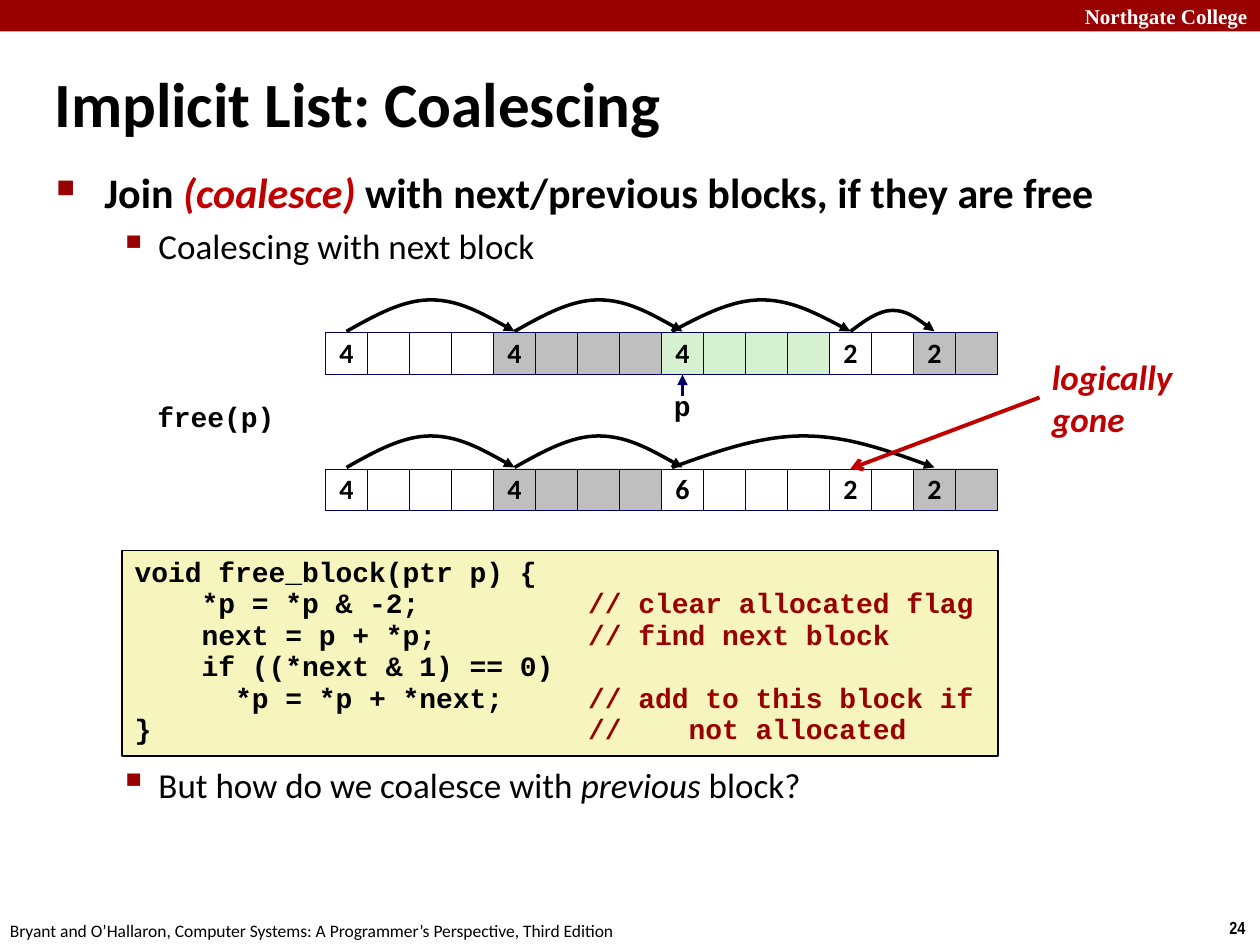
from dataclasses import dataclass

from lxml import etree
from pptx import Presentation
from pptx.dml.color import RGBColor
from pptx.enum.shapes import MSO_CONNECTOR, MSO_SHAPE
from pptx.enum.text import MSO_ANCHOR, PP_ALIGN
from pptx.oxml.ns import qn
from pptx.util import Inches, Pt

RECT, STRAIGHT = MSO_SHAPE.RECTANGLE, MSO_CONNECTOR.STRAIGHT
LEFT, CENTER, RIGHT = PP_ALIGN.LEFT, PP_ALIGN.CENTER, PP_ALIGN.RIGHT
TOP, MIDDLE = MSO_ANCHOR.TOP, MSO_ANCHOR.MIDDLE
SIDE_LEFT, SIDE_TOP, SIDE_BOTTOM = 1, 0, 2


@dataclass(frozen=True)
class Theme:
    black: str = "000000"
    white: str = "FFFFFF"
    crimson: str = "990000"
    red: str = "C00000"
    navy: str = "000066"
    gray: str = "BFBFBF"
    green: str = "D5F1CF"
    cream: str = "F6F5BD"
    sans: str = "Calibri"
    mono: str = "Courier New"
    serif: str = "Times New Roman"
    narrow: str = "Arial Narrow"
    title: int = 36
    heading: int = 24
    body: int = 20
    code: int = 16
    header: int = 12
    footer: int = 10


class SlideBuilder:
    """Draws on one slide; lengths are units of a 120 by 90 grid."""

    def __init__(self, slide, theme):
        self.shapes = slide.shapes
        self.theme = theme

    def grid(self, *units):
        return [Inches(unit / 12) for unit in units]

    def paragraph(self, frame, runs, size, font=None, bold=False, italic=False,
                  color=None, align=LEFT, spacing=1.0, first=False):
        """Add a paragraph; each run is its text and a dict of what differs."""
        para = frame.paragraphs[0] if first else frame.add_paragraph()
        para.alignment, para.line_spacing = align, spacing
        for words, changes in runs:
            run = para.add_run()
            run.text = words
            run.font.size = Pt(size)
            run.font.name = font or self.theme.sans
            run.font.bold = bold
            run.font.italic = changes.get("italic", italic)
            run.font.color.rgb = RGBColor.from_string(
                changes.get("color", color or self.theme.black))
        return para

    def text(self, box, lines, size, anchor=TOP, wrap=True, **style):
        label = self.shapes.add_textbox(*self.grid(*box))
        label.text_frame.word_wrap = wrap
        label.text_frame.vertical_anchor = anchor
        for number, line in enumerate(lines):
            self.paragraph(label.text_frame, [(line, {})], size,
                           first=number == 0, **style)
        return label

    def bullets(self, box, items):
        """Write bulleted items given as (level, runs)."""
        frame = self.shapes.add_textbox(*self.grid(*box)).text_frame
        frame.word_wrap = True
        levels = [(self.theme.heading, True, 0.83, 17.5, 0.38, 0.38, "■", 60),
                  (self.theme.body, False, 0.88, 7.5, 0.81, 0.31, "▪", 110)]
        for number, (level, runs) in enumerate(items):
            size, bold, spacing, before, margin, hang, mark, percent = levels[level]
            para = self.paragraph(frame, runs, size, bold=bold, spacing=spacing,
                                  first=number == 0)
            para.space_before = Pt(before)
            props = para._p.get_or_add_pPr()
            props.set("marL", str(Inches(margin)))
            props.set("indent", str(-Inches(hang)))
            tint = etree.SubElement(props, qn("a:buClr"))
            etree.SubElement(tint, qn("a:srgbClr"), val=self.theme.crimson)
            etree.SubElement(props, qn("a:buSzPct"), val=str(percent * 1000))
            etree.SubElement(props, qn("a:buChar"), char=mark)

    def rect(self, box, fill, line=None, width=1.0):
        shape = self.shapes.add_shape(RECT, *self.grid(*box))
        shape.shadow.inherit = False
        shape.fill.solid()
        shape.fill.fore_color.rgb = RGBColor.from_string(fill)
        if line:
            self.stroke(shape, line, width)
        else:
            shape.line.fill.background()
        return shape

    def stroke(self, shape, color, width, head=None):
        shape.line.color.rgb = RGBColor.from_string(color)
        shape.line.width = Pt(width)
        if head:
            outline = shape._element.spPr.find(qn("a:ln"))
            etree.SubElement(outline, qn("a:tailEnd"), type=head)

    def blocks(self, left, top, blocks):
        """Draw a row of blocks given as (header, words, fill); return its cells."""
        cells = []
        for header, words, fill in blocks:
            for word in range(words):
                cell = self.rect((left + 4 * len(cells), top, 4, 4), fill,
                                 self.theme.navy, 0.25)
                if word == 0:
                    cell.text_frame.word_wrap = False
                    cell.text_frame.vertical_anchor = MIDDLE
                    self.paragraph(cell.text_frame, [(header, {})], self.theme.code,
                                   bold=True, align=CENTER, spacing=0.98, first=True)
                cells.append(cell)
        return cells

    def arc(self, start, end, base, height):
        """Draw a curved arrow that rises from the base line and returns to it."""
        shares = [(1 / 6, 0.5), (1 / 3, 1), (0.5, 1), (2 / 3, 1), (5 / 6, 0.5), (1, 0)]
        points = [self.grid(start + (end - start) * across, base - height * up)
                  for across, up in shares]
        builder = self.shapes.build_freeform(*self.grid(start, base))
        builder.add_line_segments(points, close=False)
        shape = builder.convert_to_shape()
        route = shape._element.find(".//" + qn("a:path"))
        segments = route.findall(qn("a:lnTo"))
        for half in (segments[:3], segments[3:]):
            curve = etree.SubElement(route, qn("a:cubicBezTo"))
            for segment in half:
                curve.append(segment[0])
                route.remove(segment)
        shape.shadow.inherit = False
        shape.fill.background()
        self.stroke(shape, self.theme.black, 2, "triangle")

    def arrow(self, start, end, color, width, head):
        link = self.shapes.add_connector(STRAIGHT, *self.grid(*start, *end))
        self.stroke(link, color, width, head)
        etree.SubElement(link._element.spPr, qn("a:effectLst"))
        return link

    def code(self, box, lines):
        """Draw a code panel of (statement, comment) lines, comments on a tab stop."""
        frame = self.rect(box, self.theme.cream, self.theme.black).text_frame
        frame.word_wrap, frame.vertical_anchor = True, TOP
        for number, (statement, comment) in enumerate(lines):
            runs = [(statement + "\t" if comment else statement, {})]
            if comment:
                runs.append((comment, {"color": self.theme.crimson}))
            para = self.paragraph(frame, runs, self.theme.code, font=self.theme.mono,
                                  bold=True, spacing=0.94, first=number == 0)
            stops = etree.SubElement(para._p.get_or_add_pPr(), qn("a:tabLst"))
            etree.SubElement(stops, qn("a:tab"), pos=str(Inches(3.6)), algn="l")


def main():
    deck = Presentation()
    deck.slide_width, deck.slide_height = Inches(10), Inches(7.5)
    theme = Theme()
    page = SlideBuilder(deck.slides.add_slide(deck.slide_layouts[6]), theme)

    page.rect((0, 0, 120, 3), theme.crimson)
    page.text((96, 0, 24, 3), ["Northgate College"], theme.header, anchor=MIDDLE,
              font=theme.serif, bold=True, color=theme.white, align=RIGHT)
    page.text((115.92, 86.76, 4.08, 3.24), ["24"], theme.footer, wrap=False,
              font=theme.narrow, bold=True)
    page.text((-0.24, 87, 61, 3), ["Bryant and O’Hallaron, Computer Systems: "
              "A Programmer’s Perspective, Third Edition"], theme.footer, wrap=False)
    page.text((4, 6, 88.8, 7.56), ["Implicit List: Coalescing"], theme.title,
              anchor=MIDDLE, bold=True)

    page.bullets((4.2, 16.08, 109, 12), [
        (0, [("Join ", {}), ("(coalesce) ", {"color": theme.red, "italic": True}),
             ("with next/previous blocks, if they are free", {})]),
        (1, [("Coalescing with next block", {})])])
    page.bullets((4.2, 72.6, 109, 5), [
        (1, [("But how do we coalesce with ", {}), ("previous", {"italic": True}),
             (" block?", {})])])

    page.code((11.64, 52.44, 83.4, 19.56), [
        ("void free_block(ptr p) {", ""),
        ("    *p = *p & -2;", "// clear allocated flag"),
        ("    next = p + *p;", "// find next block"),
        ("    if ((*next & 1) == 0)", ""),
        ("      *p = *p + *next;", "// add to this block if"),
        ("}", "//    not allocated")])

    left, before_top, after_top = 31, 31.68, 44.64
    kept = [("4", 4, theme.white), ("4", 4, theme.gray)]
    tail = [("2", 2, theme.white), ("2", 2, theme.gray)]
    before = page.blocks(left, before_top, kept + [("4", 4, theme.green)] + tail)
    after = page.blocks(left, after_top, kept + [("6", 4, theme.white)] + tail)

    first_hops = [(33, 49, 3), (49, 65, 3)]
    for top, hops in ((before_top, [(64, 81, 3), (81, 89, 2)]),
                      (after_top, [(64, 89, 3)])):
        for start, end, height in first_hops + hops:
            page.arc(start, end, top - 0.12, height)

    mono = {"font": theme.mono, "bold": True, "spacing": 0.94}
    page.text((13.8, 37.68, 13.68, 4.32), ["free(p)"], theme.code, wrap=False, **mono)
    page.text((63, 36.72, 4, 4.32), ["p"], theme.code, wrap=False, **mono)
    pointer = page.arrow((65, 37.68), (65, 35.68), theme.navy, 2, "triangle")
    pointer.end_connect(before[8], SIDE_BOTTOM)

    gone = page.text((99, 33.24, 13.92, 9.24), ["logically", "gone"], theme.body,
                     wrap=False, bold=True, italic=True, color=theme.red)
    callout = page.arrow((99, 37.86), (81, after_top), theme.red, 2.25, "arrow")
    callout.begin_connect(gone, SIDE_LEFT)
    callout.end_connect(after[12], SIDE_TOP)

    deck.save("out.pptx")


if __name__ == "__main__":
    main()
